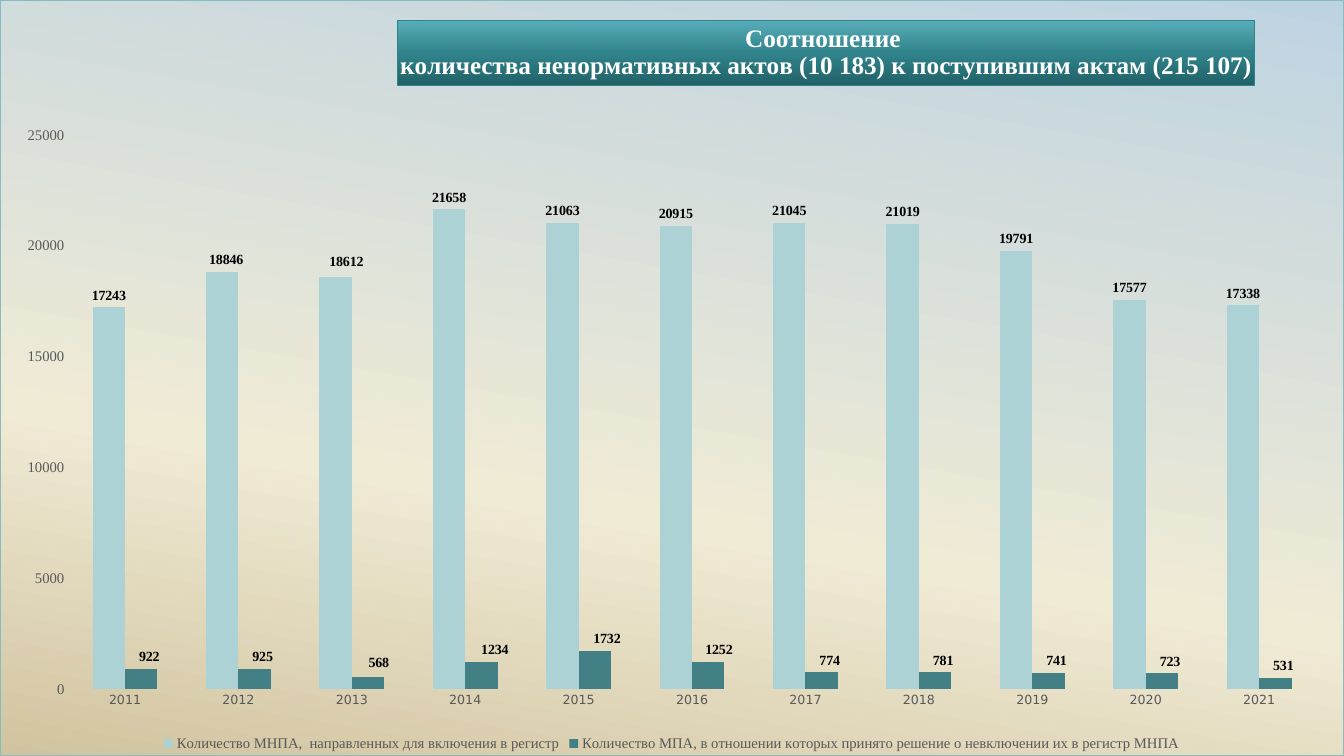
from lxml import etree
from pptx import Presentation
from pptx.chart.data import CategoryChartData
from pptx.dml.color import RGBColor
from pptx.enum.chart import XL_CHART_TYPE, XL_LABEL_POSITION, XL_LEGEND_POSITION, XL_TICK_MARK
from pptx.enum.text import PP_ALIGN
from pptx.oxml.ns import qn
from pptx.util import Cm, Pt

CLUSTERED = XL_CHART_TYPE.COLUMN_CLUSTERED
OUTSIDE_END = XL_LABEL_POSITION.OUTSIDE_END
BOTTOM = XL_LEGEND_POSITION.BOTTOM
NO_TICK = XL_TICK_MARK.NONE
CENTER = PP_ALIGN.CENTER

BLACK = RGBColor(0x00, 0x00, 0x00)
WHITE = RGBColor(0xFF, 0xFF, 0xFF)
GREY = RGBColor(0x59, 0x59, 0x59)
PALE_TEAL = RGBColor(0xAD, 0xD2, 0xD6)
TEAL = RGBColor(0x43, 0x80, 0x86)
BORDER = RGBColor(0x83, 0xBC, 0xC1)
SKY = RGBColor(0xBE, 0xD3, 0xE1)
CREAM = RGBColor(0xF0, 0xEB, 0xD5)
SAND = RGBColor(0xD1, 0xC3, 0x9F)
TITLE_TOP = RGBColor(0x58, 0xAD, 0xB8)
TITLE_MIDDLE = RGBColor(0x31, 0x83, 0x8B)
TITLE_BOTTOM = RGBColor(0x21, 0x62, 0x68)

SERIF = "Times New Roman"
SANS = "DejaVu Sans"
WIDTH, HEIGHT = Cm(33.87), Cm(19.05)

YEARS = [str(year) for year in range(2011, 2022)]
RECEIVED = [17243, 18846, 18612, 21658, 21063, 20915, 21045, 21019, 19791, 17577, 17338]
REJECTED = [922, 925, 568, 1234, 1732, 1252, 774, 781, 741, 723, 531]
RECEIVED_SHIFTS = {1: (0.003, 0), 2: (0.008, -0.004)}
REJECTED_SHIFTS = {i: (0.006, 0) for i in range(len(YEARS))}
REJECTED_SHIFTS |= {2: (0.008, -0.003), 3: (0.01, 0), 4: (0.009, 0), 5: (0.008, 0)}


class ChartSlide:
    def __init__(self, presentation):
        self.slide = presentation.slides.add_slide(presentation.slide_layouts[6])

    def style(self, font, size, color, name=SERIF, bold=False):
        font.name, font.size, font.bold = name, Pt(size), bold
        font.color.rgb = color

    def gradient(self, properties, stops, angle):
        fill = etree.Element(qn("a:gradFill"), rotWithShape="1")
        stop_list = etree.SubElement(fill, qn("a:gsLst"))
        for position, color in stops:
            stop = etree.SubElement(stop_list, qn("a:gs"), pos=str(position * 1000))
            etree.SubElement(stop, qn("a:srgbClr"), val=str(color))
        etree.SubElement(fill, qn("a:lin"), ang=str(angle * 60000), scaled="0")
        properties.insert(0, fill)

    def border(self, properties, color):
        line = etree.SubElement(properties, qn("a:ln"), w=str(Pt(0.75)))
        solid = etree.SubElement(line, qn("a:solidFill"))
        etree.SubElement(solid, qn("a:srgbClr"), val=str(color))

    def layout(self, **values):
        layout = etree.Element(qn("c:layout"))
        manual = etree.SubElement(layout, qn("c:manualLayout"))
        for key, value in values.items():
            etree.SubElement(manual, qn("c:" + key), val=str(value))
        return layout

    def columns(self, categories, series):
        data = CategoryChartData()
        data.categories = categories
        for name, values in series:
            data.add_series(name, values)
        frame = self.slide.shapes.add_chart(CLUSTERED, 0, 0, WIDTH, HEIGHT, data)
        self.chart = frame.chart
        self.style(self.chart.font, 10, BLACK, SANS)
        plot = self.chart.plots[0]
        plot.gap_width, plot.overlap, plot.vary_by_categories = 150, 0, False
        area = self.chart._chartSpace.chart.plotArea
        for old in area.findall(qn("c:layout")):
            area.remove(old)
        area.insert(0, self.layout(layoutTarget="inner", xMode="edge", yMode="edge",
                                   x=0.0505, y=0.1786, w=0.929, h=0.734))

    def background(self, stops, angle, color):
        properties = etree.Element(qn("c:spPr"))
        self.gradient(properties, stops, angle)
        self.border(properties, color)
        self.chart._chartSpace.chart.addnext(properties)

    def title(self, lines, stops):
        title = self.chart.chart_title
        title.include_in_layout = False
        frame = title.text_frame
        for i, text in enumerate(lines):
            paragraph = frame.add_paragraph() if i else frame.paragraphs[0]
            paragraph.alignment = CENTER
            run = paragraph.add_run()
            run.text = text
            self.style(run.font, 18, WHITE, bold=True)
        title.format.line.width = Pt(0.75)
        title.format.line.color.rgb = TITLE_MIDDLE
        element = title._element
        self.gradient(element.find(qn("c:spPr")), stops, 90)
        for old in element.findall(qn("c:layout")):
            element.remove(old)
        element.find(qn("c:tx")).addnext(
            self.layout(xMode="edge", yMode="edge", x=0.2954, y=0.0265))

    def axes(self):
        for axis, size, name in ((self.chart.category_axis, 9, SANS),
                                 (self.chart.value_axis, 10.5, SERIF)):
            axis.has_major_gridlines = False
            axis.major_tick_mark = axis.minor_tick_mark = NO_TICK
            axis.format.line.fill.background()
            self.style(axis.tick_labels.font, size, GREY, name)
        values = self.chart.value_axis
        values.minimum_scale, values.maximum_scale, values.major_unit = 0, 25000, 5000

    def legend(self):
        self.chart.has_legend = True
        legend = self.chart.legend
        legend.position, legend.include_in_layout = BOTTOM, False
        self.style(legend.font, 10.5, GREY)

    def series(self, index, color, shifts):
        series = self.chart.plots[0].series[index]
        series.format.fill.solid()
        series.format.fill.fore_color.rgb = color
        labels = series.data_labels
        labels.show_value, labels.position = True, OUTSIDE_END
        self.style(labels.font, 10, BLACK, bold=True)
        for i, (x, y) in shifts.items():
            label = series.points[i].data_label
            label.position = OUTSIDE_END
            self.style(label.font, 10, BLACK, bold=True)
            element = labels._element.findall(qn("c:dLbl"))[-1]
            element.find(qn("c:idx")).addnext(self.layout(x=x, y=y))


def main():
    presentation = Presentation()
    presentation.slide_width, presentation.slide_height = WIDTH, HEIGHT
    acts = ChartSlide(presentation)
    acts.columns(YEARS, [
        ("Количество МНПА,  направленных для включения в регистр", RECEIVED),
        ("Количество МПА, в отношении которых принято решение о невключении их в регистр МНПА",
         REJECTED)])
    acts.background([(0, SKY), (65, CREAM), (100, SAND)], 100, BORDER)
    acts.title(["Соотношение ",
                "количества ненормативных актов (10 183) к поступившим актам (215 107)"],
               [(0, TITLE_TOP), (50, TITLE_MIDDLE), (100, TITLE_BOTTOM)])
    acts.axes()
    acts.legend()
    acts.series(0, PALE_TEAL, RECEIVED_SHIFTS)
    acts.series(1, TEAL, REJECTED_SHIFTS)
    presentation.save("out.pptx")


if __name__ == "__main__":
    main()
